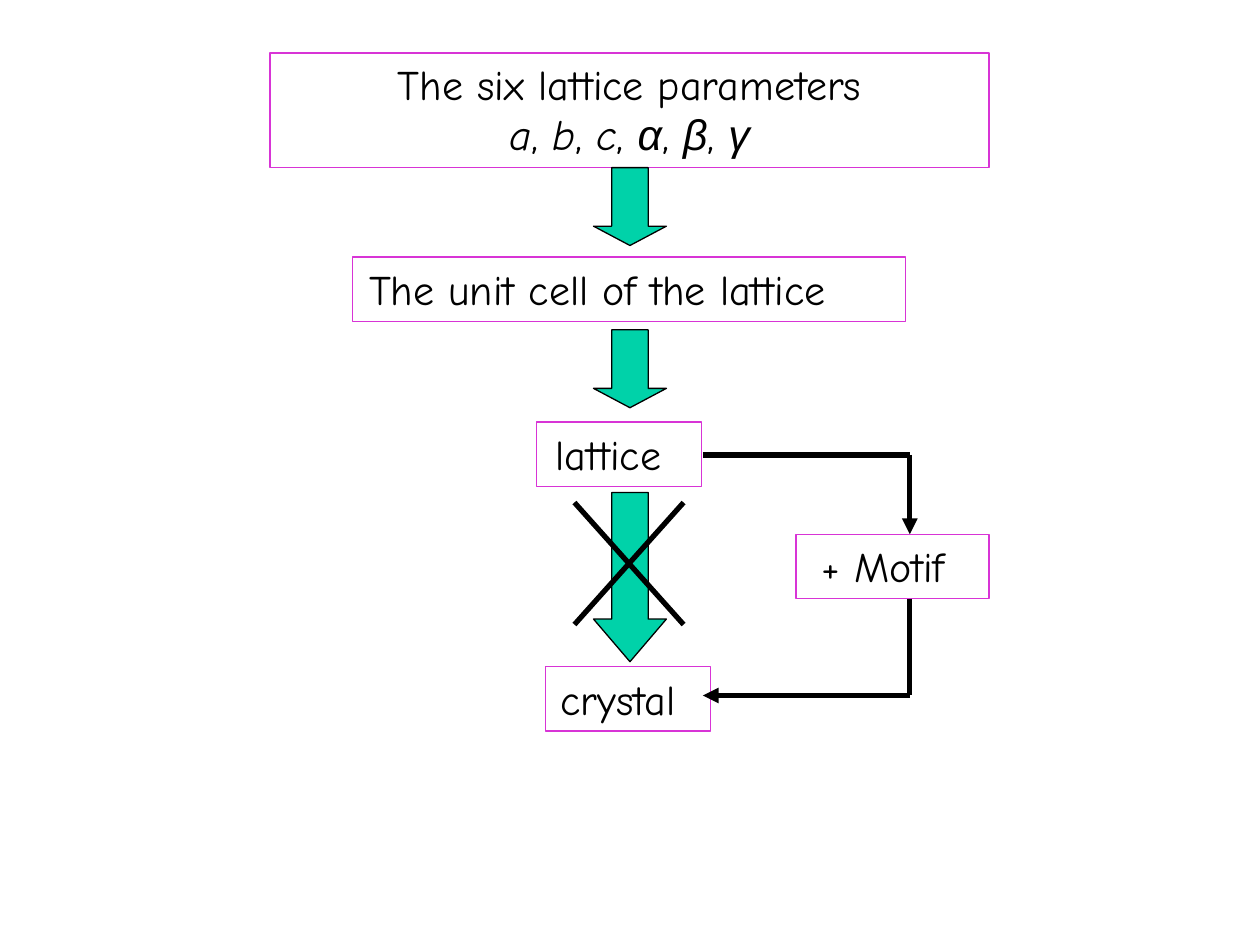
import pptx
import pptx.dml.color
import pptx.enum.shapes
import pptx.enum.text
import pptx.oxml
import pptx.oxml.ns
import pptx.util
from pptx.util import Cm

FONT, GREEK_FONT = "Comic Neue", "Arial"
BLACK, MAGENTA, GREEN = "000000", "D834D6", "00D2A9"
BOX_HEIGHT = 1.3
AXIS = 12.7


def colour(value):
    return pptx.dml.color.RGBColor.from_string(value)


def apply(target, values):
    for name, value in values.items():
        setattr(target, name, value)


def outline(line, value, width):
    line.color.rgb = colour(value)
    line.width = pptx.util.Pt(width)


def add_span(para, text, **values):
    span = para.add_run()
    span.text = text
    span.font.color.rgb = colour(BLACK)
    apply(span.font, {"name": FONT, "size": pptx.util.Pt(24), "bold": False, **values})


def prepare_frame(box, indent=0):
    """Give a box its thin outline and insets, and return its text frame."""
    outline(box.line, MAGENTA, 0.75)
    frame = box.text_frame
    apply(frame, {
        "word_wrap": True,
        "auto_size": pptx.enum.text.MSO_AUTO_SIZE.NONE,
        "vertical_anchor": pptx.enum.text.MSO_ANCHOR.TOP,
        "margin_left": Cm(indent), "margin_top": Cm(0.13),
        "margin_right": 0, "margin_bottom": 0,
    })
    frame.paragraphs[0].space_before = pptx.util.Pt(3.6)
    return frame


def parameters_title(page, left, top, width, height):
    title = page.shapes.title
    apply(title, {"left": Cm(left), "top": Cm(top), "width": Cm(width), "height": Cm(height)})
    frame = prepare_frame(title)
    heading, symbols = frame.paragraphs[0], frame.add_paragraph()
    for para, spacing in ((heading, 28.1), (symbols, 28.8)):
        para.alignment = pptx.enum.text.PP_ALIGN.CENTER
        para.line_spacing = pptx.util.Pt(spacing)
    add_span(heading, "The six lattice parameters")
    for index, symbol in enumerate("abcαβγ"):
        if index:
            add_span(symbols, ", ")
        add_span(symbols, symbol, italic=True, size=pptx.util.Pt(24.5),
                 name=FONT if symbol in "abc" else GREEK_FONT)


def label_box(page, text, left, top, width, indent):
    box = page.shapes.add_textbox(Cm(left), Cm(top), Cm(width), Cm(BOX_HEIGHT))
    add_span(prepare_frame(box, indent).paragraphs[0], text)


def down_arrow(page, top, height, head, width=1.47):
    arrow = page.shapes.add_shape(
        pptx.enum.shapes.MSO_SHAPE.DOWN_ARROW,
        Cm(AXIS - width / 2), Cm(top), Cm(width), Cm(height))
    arrow.adjustments[0] = 0.5
    arrow.adjustments[1] = head / width
    arrow.shadow.inherit = False
    arrow.fill.solid()
    arrow.fill.fore_color.rgb = colour(GREEN)
    outline(arrow.line, BLACK, 0.75)


def thick_line(page, start, end, arrowhead=False):
    link = page.shapes.add_connector(
        pptx.enum.shapes.MSO_CONNECTOR.STRAIGHT, *map(Cm, start + end))
    outline(link.line, BLACK, 3)
    properties = link._element.spPr
    if arrowhead:
        tail = pptx.oxml.parse_xml(
            f'<a:tailEnd {pptx.oxml.ns.nsdecls("a")} type="triangle"/>')
        properties.find(pptx.oxml.ns.qn("a:ln")).append(tail)
    properties.append(pptx.oxml.parse_xml(
        f'<a:effectLst {pptx.oxml.ns.nsdecls("a")}/>'))


def cross(page, left, top, width, height):
    right, bottom = left + width, top + height
    thick_line(page, (left, top), (right, bottom))
    thick_line(page, (left, bottom), (right, top))


def motif_detour(page, left, top, width, height):
    """Route from lattice to crystal by way of the motif box."""
    right, bottom = left + width, top + height
    motif_top = top + 1.6
    thick_line(page, (left, top), (right, top))
    thick_line(page, (right, top), (right, motif_top), arrowhead=True)
    label_box(page, "+ Motif", right - 2.29, motif_top, 3.89, 0.51)
    thick_line(page, (right, motif_top + BOX_HEIGHT), (right, bottom))
    thick_line(page, (right, bottom), (left, bottom), arrowhead=True)


def main():
    deck = pptx.Presentation()
    deck.slide_width, deck.slide_height = Cm(25.4), Cm(19.05)
    page = deck.slides.add_slide(deck.slide_layouts[5])

    parameters_title(page, 5.44, 1.07, 14.5, 2.31)
    label_box(page, "The unit cell of the lattice", 7.11, 5.18, 11.15, 0.33)
    label_box(page, "lattice", 10.82, 8.51, 3.33, 0.38)
    label_box(page, "crystal", 11, 13.44, 3.33, 0.3)
    for top, height, head in ((3.38, 1.57, 0.39), (6.65, 1.57, 0.39), (9.93, 3.41, 0.86)):
        down_arrow(page, top, height, head)
    cross(page, 11.58, 10.13, 2.2, 2.46)
    motif_detour(page, 14.17, 9.17, 4.17, 4.85)

    deck.save("out.pptx")


if __name__ == "__main__":
    main()
